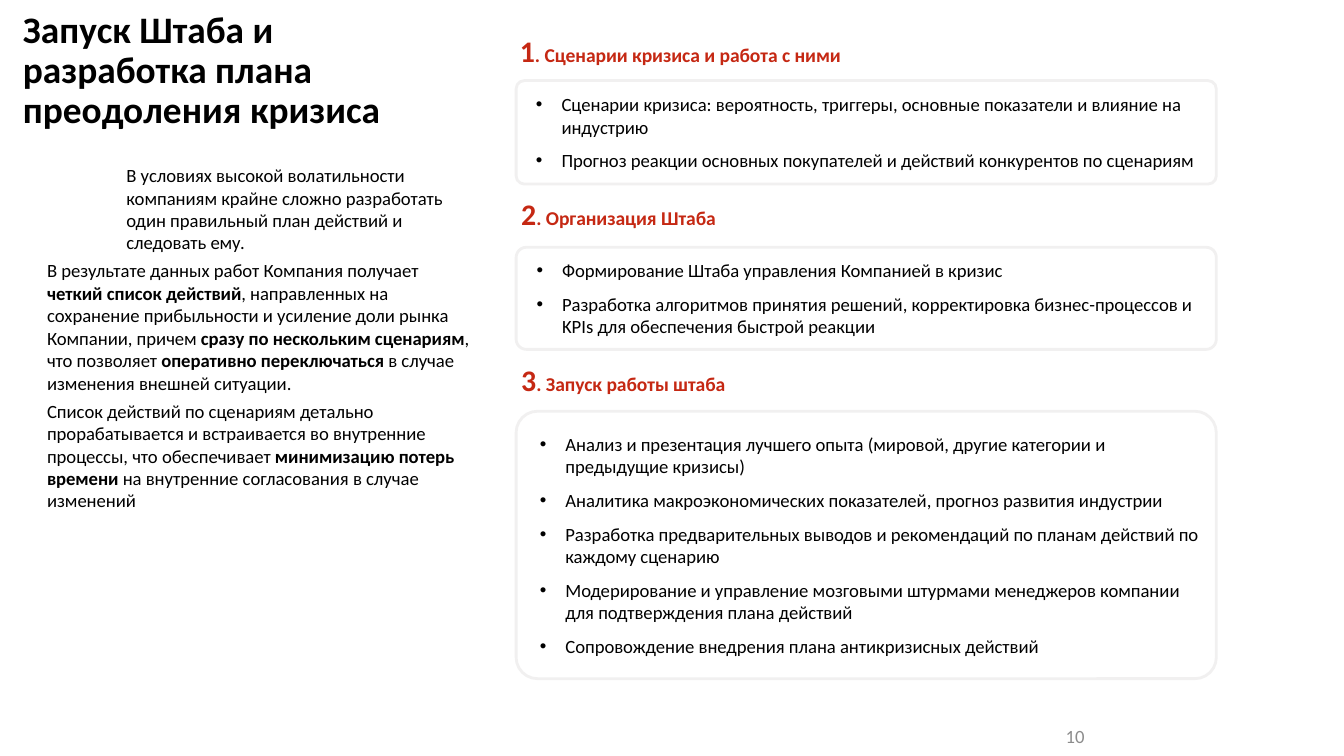
"""Builds the slide on launching the crisis headquarters."""
from lxml.etree import SubElement
from pptx import Presentation
from pptx.dml.color import RGBColor
from pptx.enum.shapes import MSO_SHAPE
from pptx.enum.text import MSO_ANCHOR, MSO_AUTO_SIZE, PP_ALIGN
from pptx.oxml.ns import qn
from pptx.util import Emu, Pt

PX = 9144
FONT = "Calibri"
BLACK, RED, GRAY, FRAME = "000000", "C52813", "8C8C8C", "F1F0F0"

TITLE = "Запуск Штаба и разработка плана преодоления кризиса"
PAGE_NUMBER = "10"
INTRO = [
    (59, "В условиях высокой волатильности компаниям крайне сложно разработать один "
         "правильный план действий и следовать ему."),
    (0, "В результате данных работ Компания получает *четкий список действий*, направленных "
        "на сохранение прибыльности и усиление доли рынка Компании, причем *сразу по "
        "нескольким сценариям*, что позволяет *оперативно переключаться *в случае изменения "
        "внешней ситуации."),
    (0, "Список действий по сценариям детально прорабатывается и встраивается во внутренние "
        "процессы, что обеспечивает *минимизацию потерь времени *на внутренние согласования "
        "в случае изменений"),
]
SECTIONS = [
    {"heading": "Сценарии кризиса и работа с ними", "heading_at": (377, 14, 523, 47),
     "top": 60, "height": 77, "corner": 0.08,
     "points": [
         "Сценарии кризиса: вероятность, триггеры, основные показатели и влияние на индустрию",
         "Прогноз реакции основных покупателей и действий конкурентов по сценариям"]},
    {"heading": "Организация Штаба", "heading_at": (378, 136, 523, 47),
     "top": 184, "height": 76, "corner": 0.1,
     "points": [
         "Формирование Штаба управления Компанией в кризис",
         "Разработка алгоритмов принятия решений, корректировка бизнес-процессов и KPIs "
         "для обеспечения быстрой реакции"]},
    {"heading": "Запуск работы штаба", "heading_at": (378, 259, 583, 47),
     "top": 306, "height": 199, "corner": 0.08,
     "points": [
         "Анализ и презентация лучшего опыта (мировой, другие категории и предыдущие кризисы)",
         "Аналитика макроэкономических показателей, прогноз развития индустрии",
         "Разработка предварительных выводов и рекомендаций по планам действий по каждому "
         "сценарию",
         "Модерирование и управление мозговыми штурмами менеджеров компании для "
         "подтверждения плана действий",
         "Сопровождение внедрения плана антикризисных действий"]},
]
CARD_LEFT, CARD_WIDTH = 384, 521


def px(value):
    return Emu(value * PX)


def color(value):
    return RGBColor.from_string(value)


def place(box, left, top, width, height):
    box.left, box.top, box.width, box.height = map(px, (left, top, width, height))


def set_frame(box, side, edge, anchor=MSO_ANCHOR.TOP):
    frame = box.text_frame
    frame.word_wrap = True
    frame.auto_size = MSO_AUTO_SIZE.NONE
    frame.vertical_anchor = anchor
    frame.margin_left = frame.margin_right = px(side)
    frame.margin_top = frame.margin_bottom = px(edge)
    return frame


def style(span, size, tint=BLACK, bold=False):
    span.font.name = FONT
    span.font.size = Pt(size)
    span.font.bold = bold
    span.font.color.rgb = color(tint)


def set_indent(para, left, hanging=0, bullet=None):
    properties = para._p.get_or_add_pPr()
    properties.set("marL", str(px(left)))
    properties.set("indent", str(px(-hanging)))
    if bullet:
        SubElement(properties, qn("a:buFont")).set("typeface", "Arial")
        SubElement(properties, qn("a:buChar")).set("char", bullet)
    else:
        SubElement(properties, qn("a:buNone"))


def add_text_box(page, at, side, edge, anchor=MSO_ANCHOR.TOP):
    return set_frame(page.shapes.add_textbox(*map(px, at)), side, edge, anchor)


def fill_title(box):
    place(box, 17, 8, 282, 100)
    frame = set_frame(box, 0, 0)
    frame.text = TITLE
    para = frame.paragraphs[0]
    para.alignment = PP_ALIGN.LEFT
    para.line_spacing = 0.9
    style(para.runs[0], 20, bold=True)


def fill_intro(box):
    place(box, 35, 122, 316, 398)
    frame = set_frame(box, 0, 0)
    for index, (indent, text) in enumerate(INTRO):
        para = frame.add_paragraph() if index else frame.paragraphs[0]
        set_indent(para, indent)
        para.space_before = Pt(3 if index else 0)
        for part, words in enumerate(text.split("*")):
            span = para.add_run()
            span.text = words
            style(span, 10, bold=part % 2 == 1)


def add_card(page, section):
    card = page.shapes.add_shape(
        MSO_SHAPE.ROUNDED_RECTANGLE,
        *map(px, (CARD_LEFT, section["top"], CARD_WIDTH, section["height"])))
    card.adjustments[0] = section["corner"]
    card.shadow.inherit = False
    card.fill.background()
    card.line.color.rgb = color(FRAME)
    card.line.width = Pt(1.5)
    frame = set_frame(card, 8, 10, MSO_ANCHOR.MIDDLE)
    frame.text = "\n".join(section["points"])
    for index, para in enumerate(frame.paragraphs):
        para.alignment = PP_ALIGN.LEFT
        set_indent(para, 24, 19, "•")
        para.space_before = Pt(3 if index else 0)
        para.space_after = Pt(3)
        style(para.runs[0], 10)


def add_heading(page, number, section):
    para = add_text_box(page, section["heading_at"], 10, 10).paragraphs[0]
    for text, size in ((str(number), 16), (f". {section['heading']}", 10.5)):
        span = para.add_run()
        span.text = text
        style(span, size, RED, True)


def add_page_number(page):
    frame = add_text_box(page, (752, 533, 96, 30), 10, 5, MSO_ANCHOR.MIDDLE)
    frame.text = PAGE_NUMBER
    para = frame.paragraphs[0]
    para.alignment = PP_ALIGN.CENTER
    style(para.runs[0], 10, GRAY)


def main():
    deck = Presentation()
    deck.slide_width = px(1000)
    deck.slide_height = deck.slide_width * 9 // 16
    page = deck.slides.add_slide(deck.slide_layouts[1])
    fill_title(page.shapes.title)
    fill_intro(page.placeholders[1])
    for number, section in enumerate(SECTIONS, 1):
        add_card(page, section)
        add_heading(page, number, section)
    add_page_number(page)
    deck.save("out.pptx")


if __name__ == "__main__":
    main()
